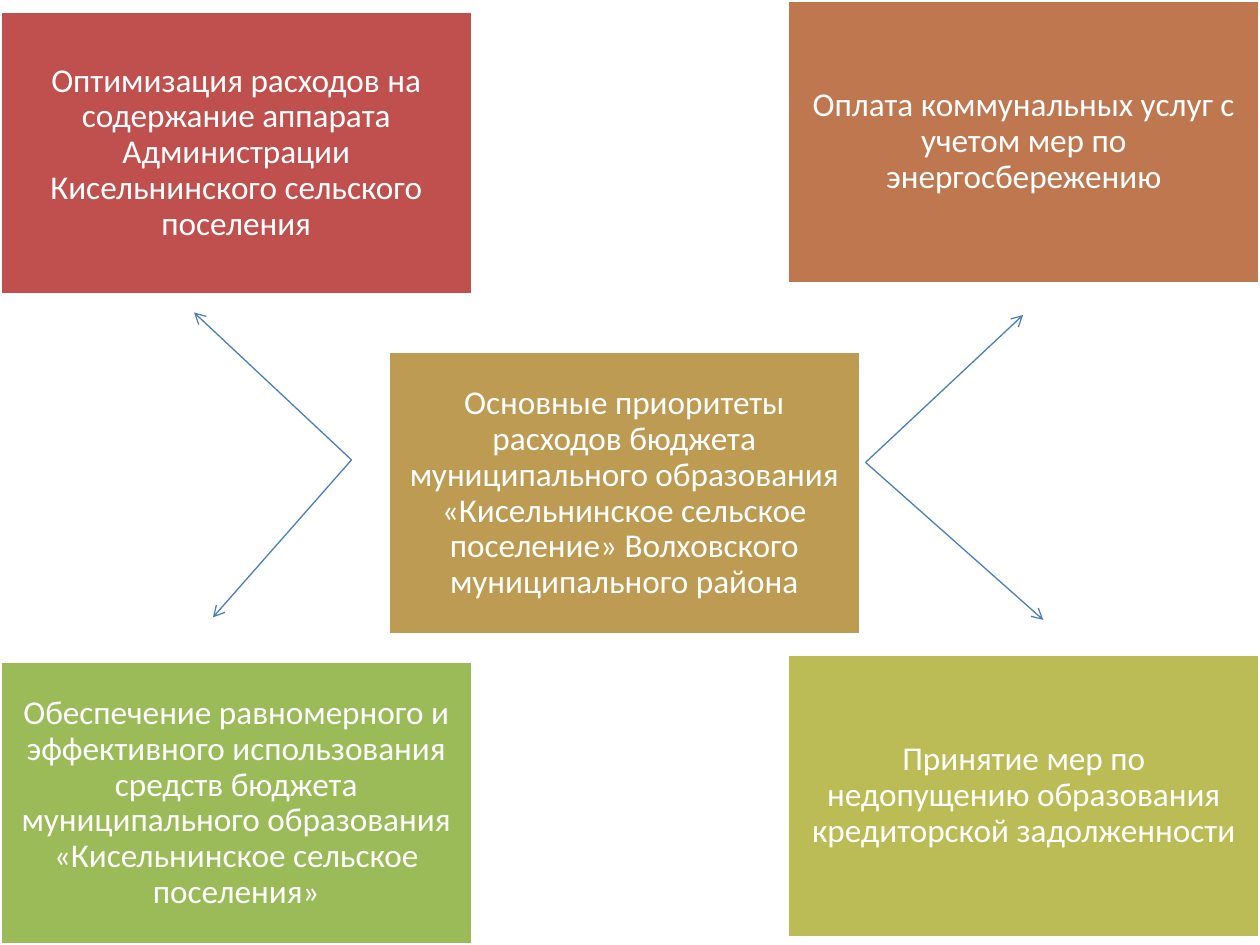
from lxml.etree import SubElement
from pptx import Presentation
from pptx.dml.color import RGBColor
from pptx.enum.shapes import MSO_CONNECTOR, MSO_SHAPE
from pptx.enum.text import MSO_ANCHOR, PP_ALIGN
from pptx.oxml.ns import qn
from pptx.util import Inches, Pt

WHITE = RGBColor(0xFF, 0xFF, 0xFF)
RED = RGBColor(0xC0, 0x50, 0x4D)
ORANGE = RGBColor(0xBF, 0x77, 0x50)
GOLD = RGBColor(0xBD, 0x9B, 0x53)
OLIVE = RGBColor(0xBC, 0xBC, 0x56)
GREEN = RGBColor(0x9B, 0xBB, 0x59)
BLUE = RGBColor(0x4B, 0x7E, 0xBC)

BOX_WIDTH, BOX_HEIGHT = 3.75, 2.25
LEFT_COLUMN, RIGHT_COLUMN = 0, 10 - BOX_WIDTH

PRIORITIES = [
    (LEFT_COLUMN, 0.09, RED,
     "Оптимизация расходов на содержание аппарата Администрации "
     "Кисельнинского сельского поселения"),
    (RIGHT_COLUMN, 0, ORANGE,
     "Оплата коммунальных услуг с учетом мер по энергосбережению"),
    (3.08, 2.79, GOLD,
     "Основные приоритеты расходов бюджета муниципального образования "
     "«Кисельнинское сельское поселение» Волховского муниципального района"),
    (RIGHT_COLUMN, 5.19, OLIVE,
     "Принятие мер по недопущению образования кредиторской задолженности"),
    (LEFT_COLUMN, 5.25, GREEN,
     "Обеспечение равномерного и эффективного использования средств бюджета "
     "муниципального образования «Кисельнинское сельское поселения»"),
]

# Each fan: the common start and the ends of its arrows
ARROW_FANS = [
    ((2.79, 3.65), [(1.69, 4.9), (1.54, 2.48)]),
    ((6.87, 3.67), [(8.12, 2.5), (8.28, 4.92)]),
]


def add_priority_box(slide, left, top, color, text):
    box = slide.shapes.add_shape(
        MSO_SHAPE.RECTANGLE, Inches(left), Inches(top),
        Inches(BOX_WIDTH), Inches(BOX_HEIGHT))
    box.shadow.inherit = False
    box.fill.solid()
    box.fill.fore_color.rgb = color
    box.line.color.rgb = WHITE
    box.line.width = Pt(2)

    frame = box.text_frame
    frame.word_wrap = True
    frame.vertical_anchor = MSO_ANCHOR.MIDDLE
    frame.margin_left = frame.margin_right = Inches(0.08)
    frame.margin_top = frame.margin_bottom = Inches(0.08)
    frame.text = text
    paragraph = frame.paragraphs[0]
    paragraph.alignment = PP_ALIGN.CENTER
    paragraph.line_spacing = 0.9
    font = paragraph.runs[0].font
    font.name = "Calibri"
    font.size = Pt(19)
    font.color.rgb = WHITE


def add_arrow(slide, start, end):
    points = [Inches(value) for value in (*start, *end)]
    arrow = slide.shapes.add_connector(MSO_CONNECTOR.STRAIGHT, *points)
    arrow.line.color.rgb = BLUE
    arrow.line.width = Pt(0.75)
    SubElement(arrow.line._get_or_add_ln(), qn("a:tailEnd"), type="arrow")
    SubElement(arrow._element.spPr, qn("a:effectLst"))


def main():
    presentation = Presentation()
    presentation.slide_width = Inches(10)
    presentation.slide_height = Inches(7.5)
    slide = presentation.slides.add_slide(presentation.slide_layouts[6])
    for priority in PRIORITIES:
        add_priority_box(slide, *priority)
    for start, ends in ARROW_FANS:
        for end in ends:
            add_arrow(slide, start, end)
    presentation.save("out.pptx")


if __name__ == "__main__":
    main()
